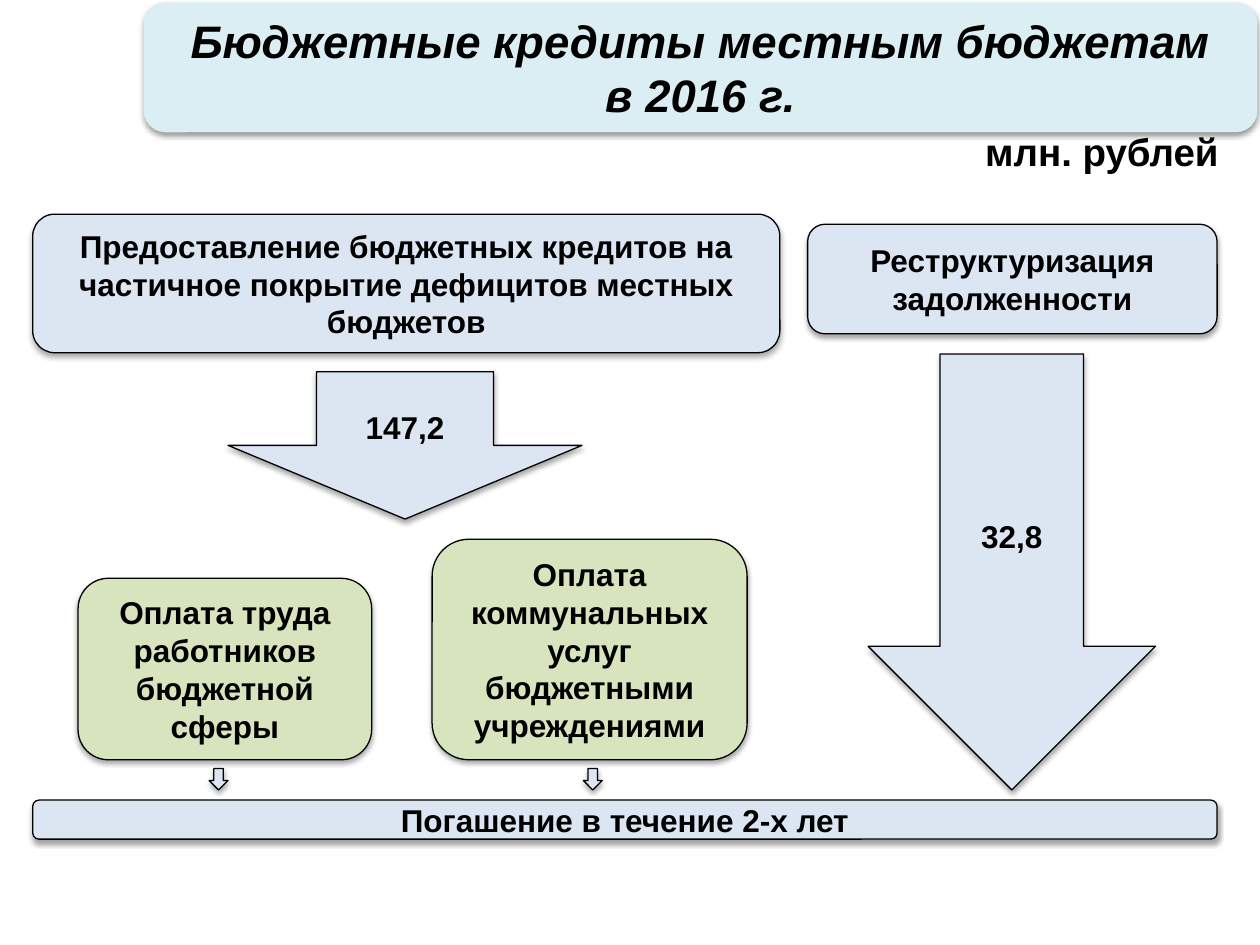
from dataclasses import dataclass

from lxml import etree
from pptx import Presentation
from pptx import util as u
from pptx.dml.color import RGBColor
from pptx.enum import shapes, text
from pptx.oxml import ns


@dataclass(frozen=True)
class Theme:
    font: str = "Arial"
    ink: str = "000000"
    title_fill: str = "DBEEF4"
    blue: str = "DCE6F2"
    green: str = "D7E4BD"
    title_size: int = 26
    unit_size: int = 22
    body_size: int = 18
    line_width: float = 0.75


T = Theme()
BOX = shapes.MSO_SHAPE.ROUNDED_RECTANGLE
ARROW = shapes.MSO_SHAPE.DOWN_ARROW

TITLE = ["Бюджетные кредиты местным бюджетам", "в 2016 г."]
UNIT = "млн. рублей"
LEFT, WIDTH = 0.26, 9.4
TIGHT = 0.159

FLOW = [
    (ARROW, (1.81, 2.95, 2.81, 1.17), T.blue, None, "147,2"),
    (BOX, (LEFT, 1.7, 5.93, 1.1), T.blue, TIGHT,
     "Предоставление бюджетных кредитов на частичное покрытие дефицитов местных бюджетов"),
    (BOX, (0.62, 4.59, 2.33, 1.44), T.green, None,
     "Оплата труда работников бюджетной сферы"),
    (BOX, (6.41, 1.78, 3.25, 0.87), T.blue, TIGHT, "Реструктуризация задолженности"),
    (ARROW, (6.89, 2.81, 2.28, 3.46), T.blue, None, "32,8"),
    (BOX, (3.43, 4.28, 2.5, 1.75), T.green, None,
     "Оплата коммунальных услуг бюджетными учреждениями"),
    (BOX, (LEFT, 6.35, WIDTH, 0.31), T.blue, TIGHT, "Погашение в течение 2-х лет"),
]
SMALL_ARROWS = [1.66, 4.63]


def color(value):
    return RGBColor.from_string(value)


def add_shadow(sp, alpha, dist):
    sp.shadow.inherit = False
    effects = sp._element.spPr.find(ns.qn("a:effectLst"))
    shadow = etree.SubElement(
        effects, ns.qn("a:outerShdw"), blurRad=str(u.Pt(3.1)), dist=str(u.Pt(dist)),
        dir="5400000", rotWithShape="0")
    clr = etree.SubElement(shadow, ns.qn("a:srgbClr"), val=T.ink)
    etree.SubElement(clr, ns.qn("a:alpha"), val=str(alpha * 1000))


def add_block(s, kind, at, fill, adj=None, outlined=True, alpha=35, dist=1.8):
    sp = s.shapes.add_shape(kind, *map(u.Inches, at))
    sp.fill.solid()
    sp.fill.fore_color.rgb = color(fill)
    if outlined:
        sp.line.color.rgb = color(T.ink)
        sp.line.width = u.Pt(T.line_width)
    else:
        sp.line.fill.background()
    if adj is not None:
        sp.adjustments[0] = adj
    add_shadow(sp, alpha, dist)
    return sp


def write(sp, lines, size, align=text.PP_ALIGN.CENTER, italic=None):
    tf = sp.text_frame
    tf.word_wrap = True
    p = tf.paragraphs[0]
    p.alignment = align
    for i, line in enumerate(lines):
        if i:
            p.add_line_break()
        r = p.add_run()
        r.text = line
        r.font.name = T.font
        r.font.size = u.Pt(size)
        r.font.bold = True
        r.font.italic = italic
        r.font.color.rgb = color(T.ink)
    return tf


def add_title(s):
    sp = add_block(s, BOX, (1.14, 0.02, 8.84, 1.03), T.title_fill,
                   outlined=False, alpha=38, dist=1.6)
    tf = write(sp, TITLE, T.title_size, italic=True)
    tf.vertical_anchor = text.MSO_ANCHOR.MIDDLE
    tf.margin_left = tf.margin_right = tf.margin_top = tf.margin_bottom = 0
    for r in tf.paragraphs[0].runs:
        ln = etree.Element(ns.qn("a:ln"), w=str(u.Pt(T.line_width)))
        fill = etree.SubElement(ln, ns.qn("a:solidFill"))
        etree.SubElement(fill, ns.qn("a:srgbClr"), val=T.ink)
        r.font._element.insert(0, ln)


def main():
    prs = Presentation()
    prs.slide_width, prs.slide_height = u.Inches(10), u.Inches(7.5)
    s = prs.slides.add_slide(prs.slide_layouts[6])

    add_title(s)
    for kind, at, fill, adj, words in FLOW:
        sp = add_block(s, kind, at, fill, adj)
        tf = write(sp, [words], T.body_size)
        tf.vertical_anchor = text.MSO_ANCHOR.MIDDLE
    for x in SMALL_ARROWS:
        add_block(s, ARROW, (x, 6.1, 0.15, 0.17), T.blue)

    unit = s.shapes.add_textbox(*map(u.Inches, (7.65, 0.97, 2.12, 0.47)))
    tf = write(unit, [UNIT], T.unit_size, text.PP_ALIGN.RIGHT)
    tf.auto_size = text.MSO_AUTO_SIZE.SHAPE_TO_FIT_TEXT

    prs.save("out.pptx")


if __name__ == "__main__":
    main()
